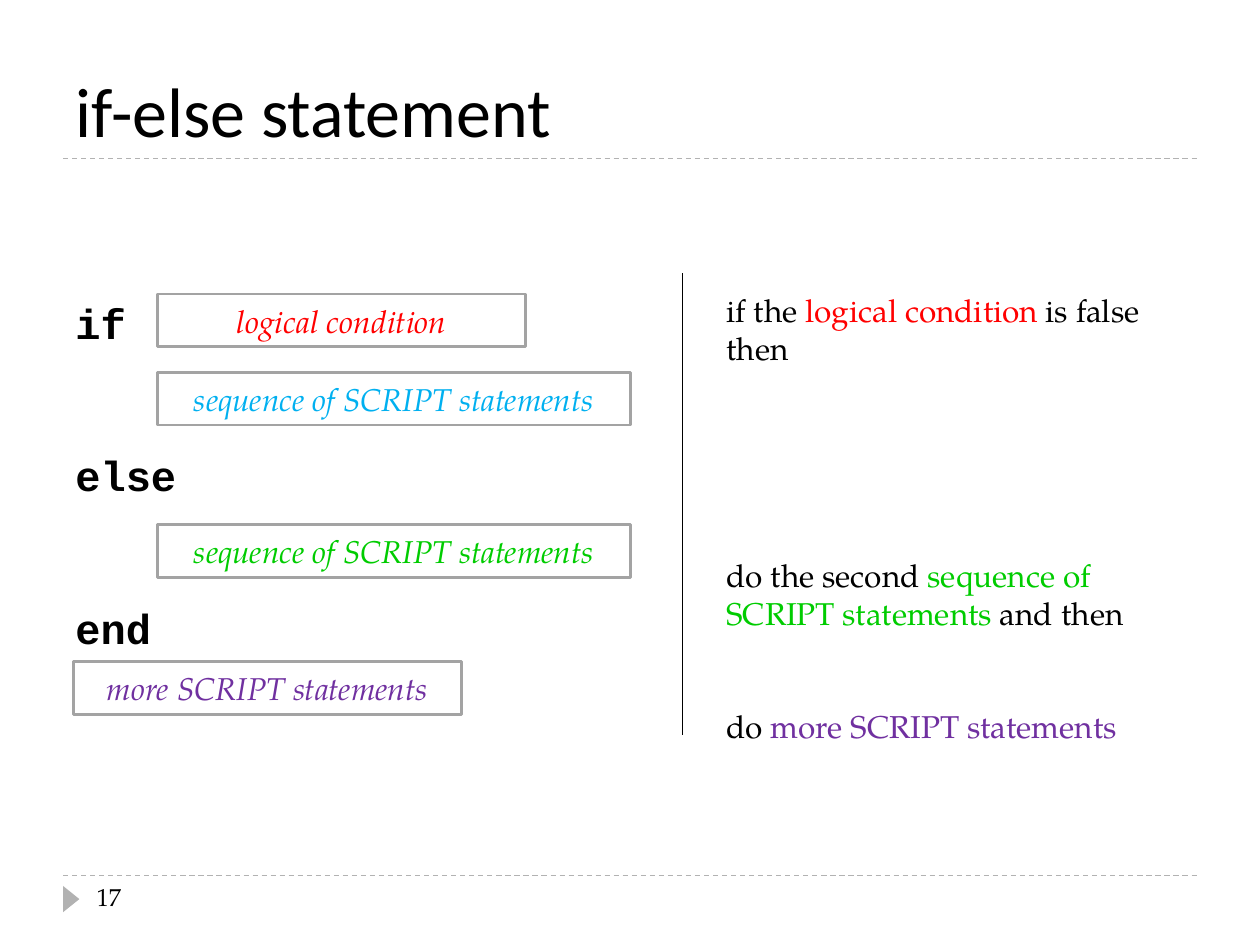
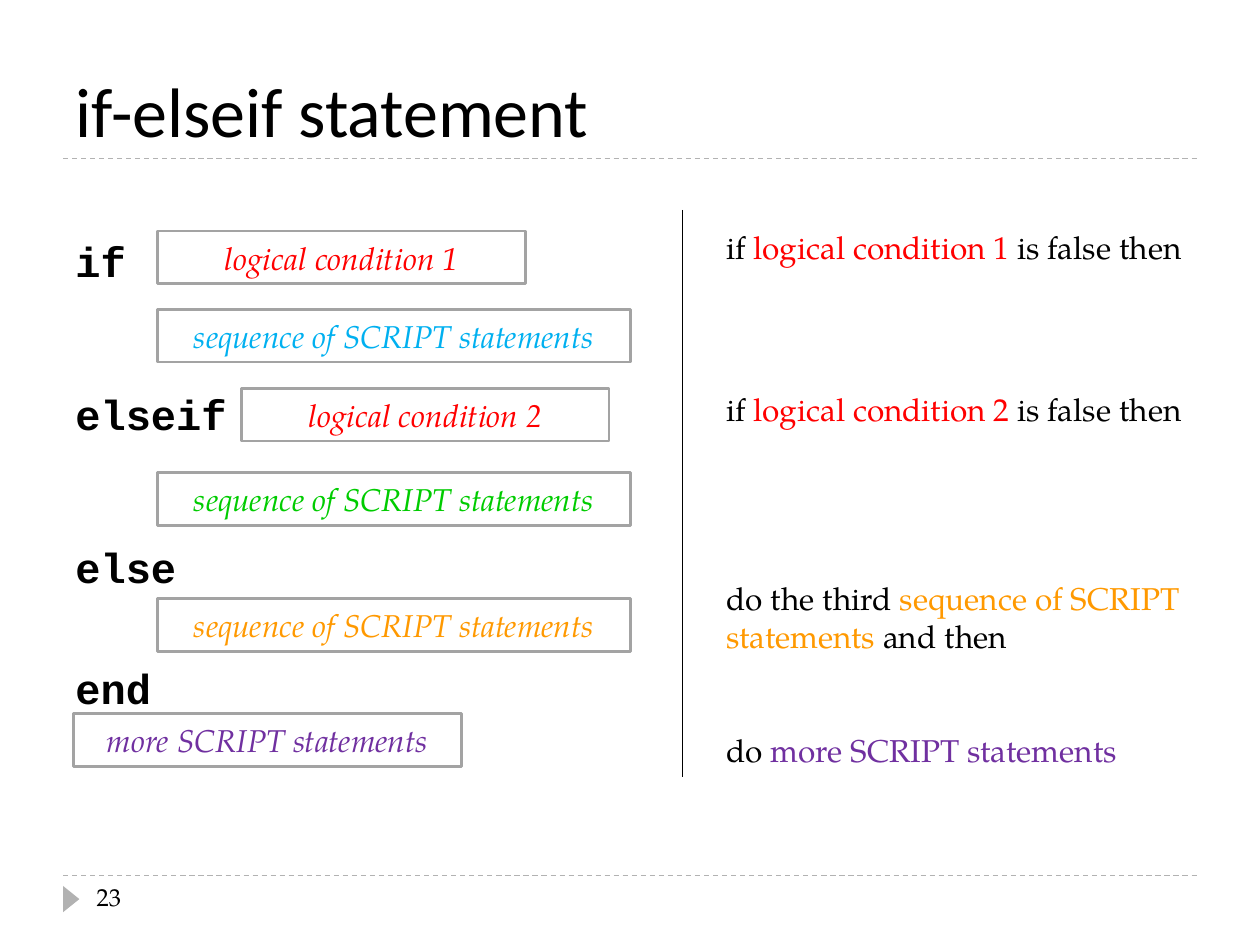
from collections import namedtuple

from lxml.etree import SubElement
from pptx import Presentation
from pptx.dml.color import RGBColor
from pptx.enum.dml import MSO_LINE
from pptx.enum.shapes import MSO_CONNECTOR as Connector, MSO_SHAPE as Shape
from pptx.enum.text import MSO_ANCHOR as Anchor, MSO_AUTO_SIZE as AutoSize, PP_ALIGN as Align
from pptx.oxml.ns import qn
from pptx.util import Cm, Pt

# Regions are boxes in centimetres
Box = namedtuple("Box", "left top width height")
# A code block: kind of block, top within the region, text, colour
Block = namedtuple("Block", "kind top text colour")

BLACK, RULE_GREY, BLOCK_GREY = "000000", "B2B2B2", "A3A3A3"
RED, BLUE, GREEN, ORANGE, PURPLE = "FF0000", "00B0F0", "00CC00", "FF9900", "7030A0"

SERIF = "TeX Gyre Pagella"
TITLE_FONT = {"name": "Calibri", "size": Pt(40)}
KEYWORD_FONT = {"name": "Courier New", "size": Pt(24), "bold": True}
BLOCK_FONT = {"name": SERIF, "size": Pt(18), "italic": True}
NOTE_FONT = {"name": SERIF, "size": Pt(18)}
NUMBER_FONT = {"name": SERIF, "size": Pt(14)}

TITLE_BOX = Box(1.27, 0.45, 22.86, 2.74)
CODE_BOX = Box(1.27, 3.38, 22.86, 13.72)
FOOTER_BOX = Box(1.27, 17.65, 22.86, 1.02)

# Left within the code region and width of each kind of block
BLOCK_SPANS = {
    "condition": (1.91, 7.41),
    "elseif condition": (3.6, 7.41),
    "sequence": (1.91, 9.53),
    "more": (0.21, 7.83),
}
BLOCK_HEIGHT = 1.06
LANGUAGE = "SCRIPT"
SEQUENCE = f"sequence of {LANGUAGE} statements"
MORE = f"more {LANGUAGE} statements"
KEYWORD_GAP = 58.5  # space above a keyword, in points
NOTE_LINE = 21.6  # height of one line of notes, in points


def colour(hex_code):
    return RGBColor.from_string(hex_code)


def set_all(target, values):
    for name, value in values.items():
        setattr(target, name, value)


def lengths(box):
    return [Cm(value) for value in box]


def add_span(para, text, font, hex_code=BLACK):
    span = para.add_run()
    span.text = text
    set_all(span.font, font)
    span.font.color.rgb = colour(hex_code)


def add_text_frame(page, box):
    frame = page.shapes.add_textbox(*lengths(box)).text_frame
    set_all(frame, {"word_wrap": True, "auto_size": AutoSize.NONE})
    return frame


def add_paras(frame, count):
    return [frame.paragraphs[0]] + [frame.add_paragraph() for _ in range(count - 1)]


def add_rule(page, start, end, hex_code, dash=None):
    rule = page.shapes.add_connector(
        Connector.STRAIGHT, *[Cm(value) for value in (*start, *end)])
    rule.line.color.rgb = colour(hex_code)
    set_all(rule.line, {"width": Pt(0.75), "dash_style": dash})
    SubElement(rule._element.spPr, qn("a:effectLst"))


def add_title(page, box, text):
    title = page.shapes.title
    set_all(title, dict(zip(("left", "top", "width", "height"), lengths(box))))
    set_all(title.text_frame, {"vertical_anchor": Anchor.BOTTOM, "auto_size": AutoSize.NONE})
    para = title.text_frame.paragraphs[0]
    para.alignment = Align.LEFT
    add_span(para, text, TITLE_FONT)
    bottom = box.top + box.height
    add_rule(page, (box.left, bottom), (box.left + box.width, bottom),
             RULE_GREY, MSO_LINE.DASH)


def add_footer(page, box, number):
    add_rule(page, (box.left, box.top), (box.left + box.width, box.top),
             RULE_GREY, MSO_LINE.DASH)
    marker = page.shapes.add_shape(
        Shape.ISOSCELES_TRIANGLE,
        *lengths(Box(box.left - 0.1, box.top + 0.31, 0.53, 0.33)))
    marker.rotation = 90
    marker.shadow.inherit = False
    marker.fill.solid()
    marker.fill.fore_color.rgb = colour(RULE_GREY)
    marker.line.fill.background()
    frame = add_text_frame(page, Box(box.left + 0.43, box.top, 5.5, box.height))
    add_span(frame.paragraphs[0], number, NUMBER_FONT)


def add_code(page, box, first_top, keywords, blocks):
    # Keywords, each with the space above it in points
    frame = add_text_frame(page, box)
    frame.margin_top = Cm(first_top)
    for para, (gap, word) in zip(add_paras(frame, len(keywords)), keywords):
        para.space_before = Pt(gap)
        add_span(para, word, KEYWORD_FONT)
    # Framed blocks
    for block in blocks:
        left, width = BLOCK_SPANS[block.kind]
        shape = page.shapes.add_shape(
            Shape.RECTANGLE,
            *lengths(Box(box.left + left, box.top + block.top, width, BLOCK_HEIGHT)))
        shape.shadow.inherit = False
        shape.fill.background()
        shape.line.color.rgb = colour(BLOCK_GREY)
        shape.line.width = Pt(1.5)
        shape.text_frame.vertical_anchor = Anchor.MIDDLE
        para = shape.text_frame.paragraphs[0]
        para.alignment = Align.CENTER
        add_span(para, block.text, BLOCK_FONT, block.colour)


def add_notes(page, box, notes):
    # Divider on the left edge, then the explanation
    add_rule(page, (box.left, box.top), (box.left, box.top + box.height), BLACK)
    frame = add_text_frame(
        page, Box(box.left + 0.63, box.top + 0.24, box.width - 0.63, box.height - 0.48))
    for para, (gap_lines, spans) in zip(add_paras(frame, len(notes)), notes):
        para.space_before = Pt(gap_lines * NOTE_LINE)
        for text, hex_code in spans:
            add_span(para, text, NOTE_FONT, hex_code)


def add_statement_page(deck, title, number, code, notes_box, notes):
    page = deck.slides.add_slide(deck.slide_layouts[5])
    add_title(page, TITLE_BOX, title)
    add_footer(page, FOOTER_BOX, number)
    add_code(page, CODE_BOX, *code)
    add_notes(page, notes_box, notes)


def main():
    deck = Presentation()
    set_all(deck, {"slide_width": Cm(25.4), "slide_height": Cm(19.05)})
    more_note = (2, [("do ", BLACK), (MORE, PURPLE)])

    # if-else
    add_statement_page(
        deck, "if-else statement", "17",
        (2.61,
         [(0, "if"), (KEYWORD_GAP, "else"), (KEYWORD_GAP, "end")],
         [Block("condition", 2.55, "logical condition", RED),
          Block("sequence", 4.13, SEQUENCE, BLUE),
          Block("sequence", 7.2, SEQUENCE, GREEN),
          Block("more", 9.96, MORE, PURPLE)]),
        Box(13.76, 5.51, 10.79, 9.31),
        [(0, [("if the ", BLACK), ("logical condition", RED), (" is false then", BLACK)]),
         (5, [("do the second ", BLACK), ("sequence of", GREEN)]),
         (0, [(f"{LANGUAGE} statements ", GREEN), ("and then", BLACK)]),
         more_note])

    # if-elseif
    add_statement_page(
        deck, "if-elseif statement", "23",
        (1.37,
         [(0, "if"), (KEYWORD_GAP, "elseif"), (KEYWORD_GAP, "else"), (40.3, "end")],
         [Block("condition", 1.28, "logical condition 1", RED),
          Block("sequence", 2.86, SEQUENCE, BLUE),
          Block("elseif condition", 4.45, "logical condition 2", RED),
          Block("sequence", 6.15, SEQUENCE, GREEN),
          Block("sequence", 8.69, SEQUENCE, ORANGE),
          Block("more", 11.01, MORE, PURPLE)]),
        Box(13.76, 4.23, 11.22, 11.43),
        [(0, [("if ", BLACK), ("logical condition 1", RED), (" is false then", BLACK)]),
         (3.3, [("if ", BLACK), ("logical condition 2 ", RED), ("is false then", BLACK)]),
         (4, [("do the third ", BLACK), (f"sequence of {LANGUAGE}", ORANGE)]),
         (0, [("statements", ORANGE), (" and then", BLACK)]),
         more_note])

    deck.save("out.pptx")


if __name__ == "__main__":
    main()
